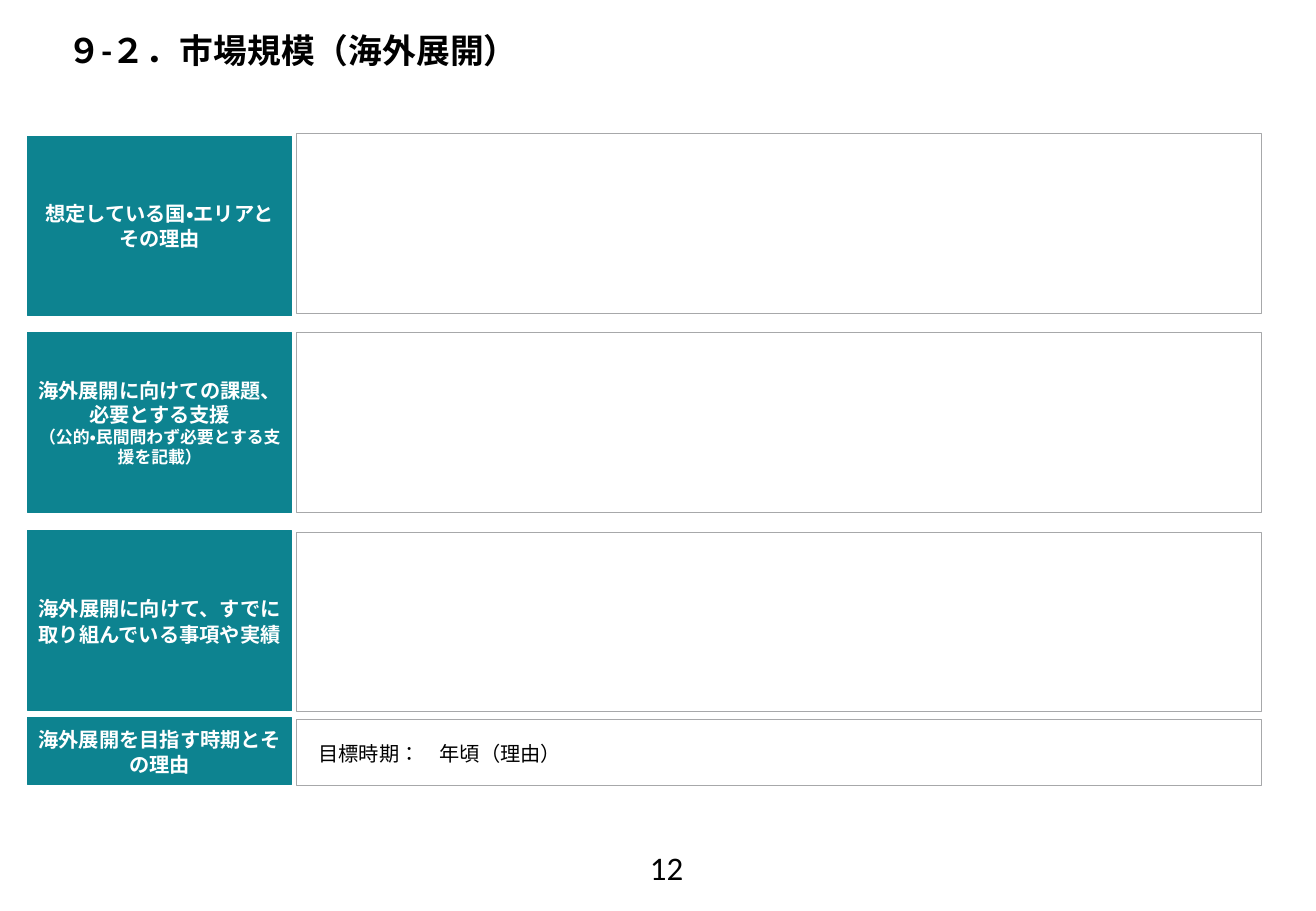
import pptx
import pptx.util
import pptx.dml.color
import pptx.enum.lang
import pptx.enum.shapes
import pptx.enum.text

PX = 9144
THEME = {
    "teal": "0D8390", "white": "FFFFFF", "grey": "A7A8AA", "black": "000000",
    "heading_font": "Calibri", "body_font": "Arial",
    "title": 20, "number": 19.5, "body": 12, "note": 10,
}
ALIGN = pptx.enum.text.PP_ALIGN


def rgb(name):
    return pptx.dml.color.RGBColor.from_string(THEME[name])


def write(tf, lines, font, color, bold, align, spacing=None):
    tf.word_wrap = True
    for i, (text, size) in enumerate(lines):
        p = tf.add_paragraph() if i else tf.paragraphs[0]
        p.alignment = align
        if spacing:
            p.line_spacing = spacing
        r = p.add_run()
        r.text = text
        r.font.name = THEME[font]
        r.font.size = pptx.util.Pt(THEME[size])
        r.font.bold = bold
        r.font.color.rgb = rgb(color)
        r.font.language_id = pptx.enum.lang.MSO_LANGUAGE_ID.JAPANESE


prs = pptx.Presentation()
prs.slide_width, prs.slide_height = 1083 * PX, 750 * PX
s = prs.slides.add_slide(prs.slide_layouts[6])

headings = [
    ((46, 20, 992, 67), "９-２．市場規模（海外展開）", "title", True),
    ((525, 693, 91, 30), "12", "number", False),
]
for box, text, size, bold in headings:
    sp = s.shapes.add_textbox(*(v * PX for v in box))
    write(sp.text_frame, [(text, size)], "heading_font", "black", bold, ALIGN.LEFT)

rows = [
    (112, 110, 148, None,
     [("想定している国・エリアと", "body"), ("その理由", "body")], []),
    (274, 274, 148, None,
     [("海外展開に向けての課題、", "body"), ("必要とする支援", "body"),
      ("（公的・民間問わず必要とする支援を記載）", "note")], []),
    (437, 438, 148, 1.06,
     [("海外展開に向けて、すでに取り組んでいる事項や実績", "body")], []),
    (591, 592, 55, 1.06,
     [("海外展開を目指す時期とその理由", "body")],
     [("目標時期：\u3000年頃（理由）".replace("\u3000", "　"), "body")]),
]
for label_top, answer_top, height, spacing, label, answer in rows:
    cells = [
        (23, label_top, 217, "teal", "teal", label, "white", True, ALIGN.CENTER, 8),
        (244, answer_top, 794, "white", "grey", answer, "black", False, ALIGN.LEFT, 18),
    ]
    for left, top, width, fill, line, lines, color, bold, align, inset in cells:
        sp = s.shapes.add_shape(pptx.enum.shapes.MSO_SHAPE.RECTANGLE,
                                left * PX, top * PX, width * PX, height * PX)
        sp.shadow.inherit = False
        sp.fill.solid()
        sp.fill.fore_color.rgb = rgb(fill)
        sp.line.color.rgb = rgb(line)
        sp.line.width = pptx.util.Pt(0.5)
        tf = sp.text_frame
        tf.vertical_anchor = pptx.enum.text.MSO_ANCHOR.MIDDLE
        tf.margin_left = inset * PX
        tf.margin_right = tf.margin_top = tf.margin_bottom = 8 * PX
        write(tf, lines, "body_font", color, bold, align, spacing)

prs.save("out.pptx")
